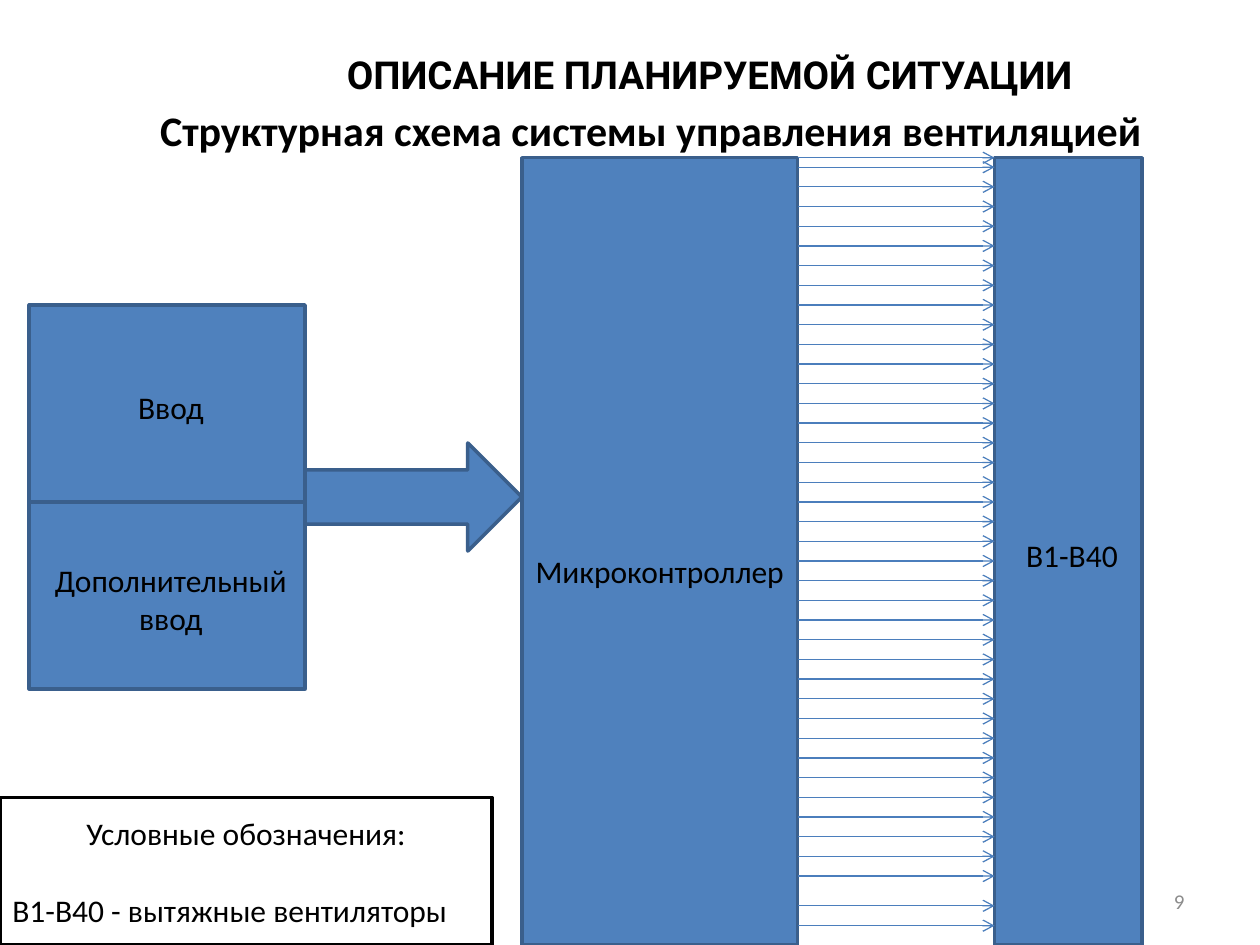
from lxml import etree
from pptx import Presentation
from pptx.dml.color import RGBColor
from pptx.enum.shapes import MSO_CONNECTOR, MSO_SHAPE
from pptx.enum.text import MSO_ANCHOR as ANCHOR, PP_ALIGN as ALIGN
from pptx.oxml.ns import qn
from pptx.util import Cm, Pt


def rgb(code):
    return RGBColor.from_string(code)


def write(sp, lines, size, align, anchor=ANCHOR.MIDDLE, font="Calibri", color="000000", bold=False):
    tf = sp.text_frame
    tf.word_wrap = True
    tf.vertical_anchor = anchor
    tf.text = "\n".join(lines)
    for p in tf.paragraphs:
        p.alignment = align
        p.font.name = font
        p.font.size = Pt(size)
        p.font.bold = bold
        p.font.color.rgb = rgb(color)
    return tf


prs = Presentation()
prs.slide_width, prs.slide_height = Cm(25.4), Cm(19.05)
s = prs.slides.add_slide(prs.slide_layouts[6])

# Headings and page number
title = s.shapes.add_textbox(Cm(5.36), Cm(0.58), Cm(16.51), Cm(1.83))
write(title, ["ОПИСАНИЕ ПЛАНИРУЕМОЙ СИТУАЦИИ"], 22, ALIGN.RIGHT, font="Roboto", bold=True)
subtitle = s.shapes.add_textbox(Cm(0.84), Cm(1.98), Cm(24.56), Cm(17.07))
write(subtitle, ["Структурная схема системы управления вентиляцией"], 24, ALIGN.CENTER, ANCHOR.TOP, bold=True)
number = s.shapes.add_textbox(Cm(21.23), Cm(17.65), Cm(2.9), Cm(1.02))
write(number, ["9"], 12, ALIGN.RIGHT, color="8C8C8C")

# Blocks: shape, left, top, width, height, text, left inset, top inset
RECT = MSO_SHAPE.RECTANGLE
blocks = [
    (RECT, 0.59, 6.15, 5.56, 3.97, "Ввод", 0.4, 0.25),
    (RECT, 0.59, 10.12, 5.56, 3.77, "Дополнительный ввод", 0.4, 0.25),
    (MSO_SHAPE.RIGHT_ARROW, 6.15, 8.93, 4.37, 2.18, "", 0.25, 0.13),
    (RECT, 10.52, 3.18, 5.56, 15.87, "Микроконтроллер", 0.1, 0.9),
    (RECT, 20.05, 3.18, 2.97, 15.87, "В1-В40", 0.4, 0.25),
]
for kind, x, y, w, h, text, inset, drop in blocks:
    sp = s.shapes.add_shape(kind, Cm(x), Cm(y), Cm(w), Cm(h))
    sp.shadow.inherit = False
    sp.fill.solid()
    sp.fill.fore_color.rgb = rgb("4F81BD")
    sp.line.color.rgb = rgb("3A5F8C")
    sp.line.width = Pt(2)
    if text:
        tf = write(sp, [text], 18, ALIGN.CENTER)
        tf.margin_left, tf.margin_top = Cm(inset), Cm(drop)
        tf.margin_right = Cm(min(inset, 0.25))

# Forty control lines: an even run of 37, one above it and two below
first, last, count = 3.37, 17.66, 37
step = (last - first) / (count - 1)
rows = [3.18] + [first + i * step for i in range(count)] + [18.26, 18.66]
for y in rows:
    line = s.shapes.add_connector(MSO_CONNECTOR.STRAIGHT, Cm(16.08), Cm(y), Cm(20.05), Cm(y))
    line.line.color.rgb = rgb("4B7EBC")
    line.line.width = Pt(0.75)
    etree.SubElement(line.line._get_or_add_ln(), qn("a:tailEnd"), type="arrow")
    etree.SubElement(line._element.spPr, qn("a:effectLst"))

# Legend
legend = s.shapes.add_shape(RECT, Cm(0), Cm(16.08), Cm(9.92), Cm(2.97))
legend.shadow.inherit = False
legend.fill.background()
legend.line.color.rgb = rgb("000000")
legend.line.width = Pt(2)
tf = write(legend, ["Условные обозначения:", "В1-В40 - вытяжные вентиляторы"], 18, ALIGN.CENTER)
p = tf.paragraphs[1]
p.alignment = ALIGN.LEFT
p.space_before = Pt(22)

prs.save("out.pptx")
